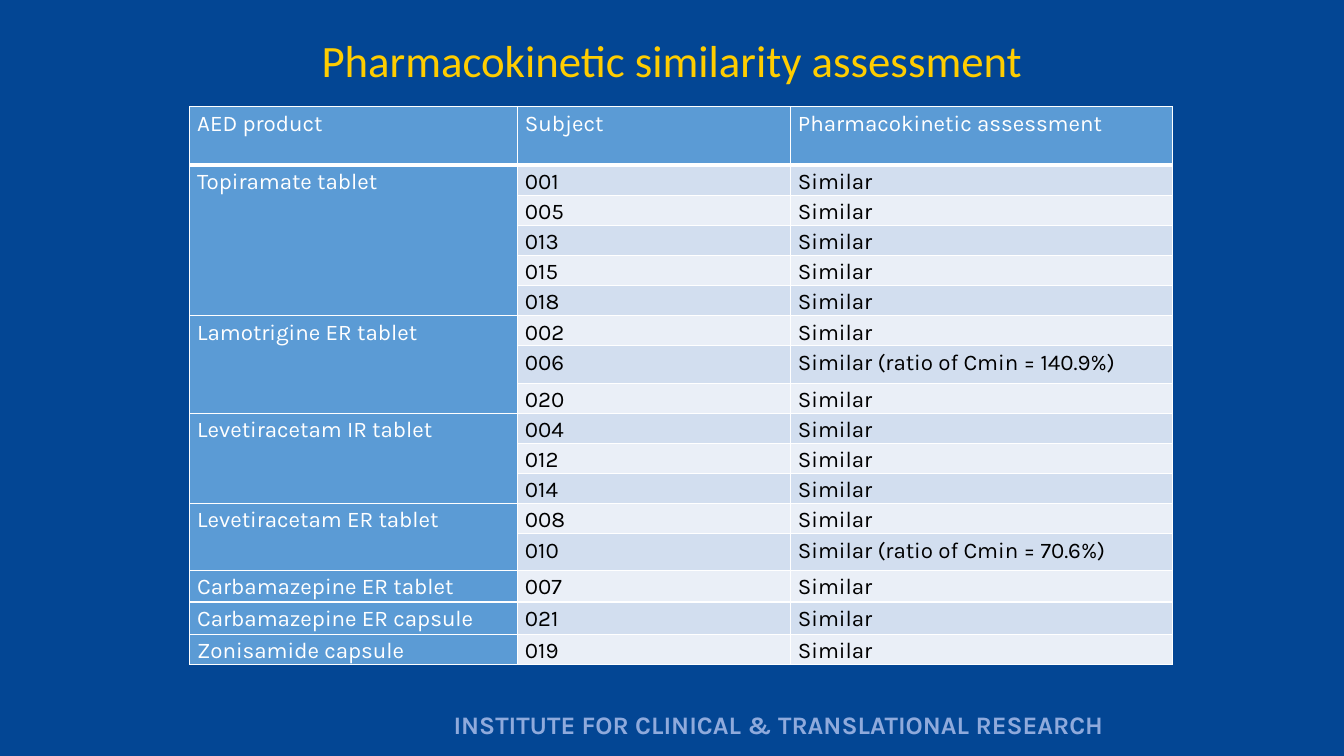
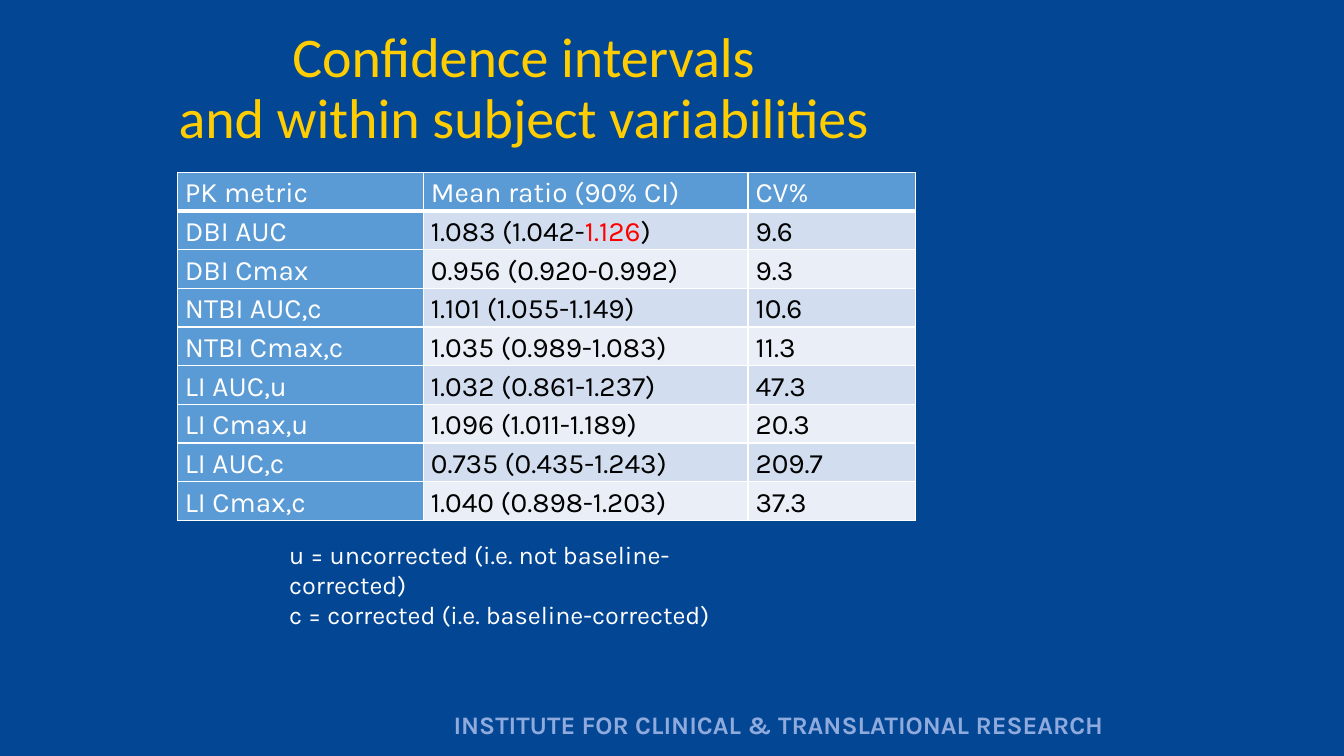
from dataclasses import dataclass

from pptx import Presentation, util as u
from pptx.dml.color import RGBColor
from pptx.enum import text
from pptx.oxml import parse_xml
from pptx.oxml.ns import nsdecls


@dataclass(frozen=True)
class Theme:
    navy: str = "034694"
    gold: str = "FFCD00"
    periwinkle: str = "8FAADC"
    blue: str = "5B9BD5"
    bands: tuple = ("EAEFF7", "D2DEEF")
    white: str = "FFFFFF"
    black: str = "000000"
    red: str = "FF0000"
    heading: str = "Calibri"
    body: str = "Karla"
    note_size: int = 18


class Deck:
    """Holds the theme and the current slide, and draws each kind of element."""

    def __init__(self, theme, footer):
        self.t = theme
        self.prs = Presentation()
        self.prs.slide_width, self.prs.slide_height = u.Cm(33.87), u.Cm(19.05)
        self.footer = footer
        self.s = None

    def slide(self, title, box, size):
        self.s = self.prs.slides.add_slide(self.prs.slide_layouts[5])
        if len(self.prs.slides) == 1:
            self.master()
        sp = self.s.shapes.title
        sp.left, sp.top, sp.width, sp.height = map(u.Cm, box)
        tf = sp.text_frame
        tf.text = title
        tf.auto_size = text.MSO_AUTO_SIZE.NONE
        tf.vertical_anchor = text.MSO_ANCHOR.MIDDLE
        p = tf.paragraphs[0]
        p.alignment = text.PP_ALIGN.CENTER
        p.line_spacing = 0.9
        self.style(p, size, self.t.gold, self.t.heading)

    def master(self):
        master = self.prs.slide_master
        fill = master.background.fill
        fill.solid()
        fill.fore_color.rgb = RGBColor.from_string(self.t.navy)
        sp = self.textbox([self.footer], (11.18, 17.75, 17.2, 1.02), self.t.periwinkle, True)
        sp.element.nvSpPr.cNvPr.set("id", "20")
        master.shapes.element.append(sp.element)

    def style(self, p, size, color, font=None, bold=False):
        for r in p.runs:
            r.font.name = font or self.t.body
            r.font.size = u.Pt(size)
            r.font.bold = bold
            r.font.color.rgb = RGBColor.from_string(color)

    def textbox(self, lines, box, color, bold=False):
        sp = self.s.shapes.add_textbox(*map(u.Cm, box))
        tf = sp.text_frame
        tf.word_wrap = True
        tf.auto_size = text.MSO_AUTO_SIZE.SHAPE_TO_FIT_TEXT
        tf.text = "\n".join(lines)
        for p in tf.paragraphs:
            self.style(p, self.t.note_size, color, bold=bold)
        return sp

    def table(self, rows, left, top, widths, heights, size, after=0):
        box = map(u.Cm, (left, top, sum(widths), sum(heights)))
        tbl = self.s.shapes.add_table(len(rows), len(widths), *box).table
        tbl.first_row = tbl.horz_banding = False
        for col, width in zip(tbl.columns, widths):
            col.width = u.Cm(width)
        for row, height in zip(tbl.rows, heights):
            row.height = u.Cm(height)
        for i, row in enumerate(rows):
            for j, value in enumerate(row):
                self.cell(tbl.cell(i, j), value, i, j, size, after)
        return tbl

    def cell(self, cell, value, i, j, size, after):
        head = i == 0 or j == 0
        cell.margin_left = cell.margin_right = u.Cm(0.19)
        cell.margin_top = cell.margin_bottom = 0
        self.borders(cell, 3 if i == 0 else 1)
        cell.fill.solid()
        fill = self.t.blue if head else self.t.bands[i % 2]
        cell.fill.fore_color.rgb = RGBColor.from_string(fill)
        p = cell.text_frame.paragraphs[0]
        p.line_spacing = 1.15
        p.space_after = u.Pt(after)
        for part in value.split("|") if value else []:
            p.add_run().text = part
        self.style(p, size, self.t.white if head else self.t.black)
        for r in p.runs[1::2]:
            r.font.color.rgb = RGBColor.from_string(self.t.red)

    def borders(self, cell, bottom):
        tcPr = cell._tc.get_or_add_tcPr()
        for side, width in (("L", 1), ("R", 1), ("T", 1), ("B", bottom)):
            tcPr.append(parse_xml(
                f'<a:ln{side} {nsdecls("a")} w="{u.Pt(width)}"><a:solidFill>'
                f'<a:srgbClr val="{self.t.white}"/></a:solidFill></a:ln{side}>'))


PRODUCTS = {
    "Topiramate tablet": ["001", "005", "013", "015", "018"],
    "Lamotrigine ER tablet": ["002", "006", "020"],
    "Levetiracetam IR tablet": ["004", "012", "014"],
    "Levetiracetam ER tablet": ["008", "010"],
    "Carbamazepine ER tablet": ["007"],
    "Carbamazepine ER capsule": ["021"],
    "Zonisamide capsule": ["019"],
}
CMIN_RATIOS = {"006": "140.9%", "010": "70.6%"}
ROW_HEIGHTS = {"006": 0.94, "010": 0.92, "007": 0.8, "021": 0.81}
METRICS = [
    ("PK metric", "Mean ratio (90% CI)", "CV%"),
    ("DBI AUC", "1.083 (1.042-|1.126|)", "9.6"),
    ("DBI Cmax", "0.956 (0.920-0.992)", "9.3"),
    ("NTBI AUC,c", "1.101 (1.055-1.149)", "10.6"),
    ("NTBI Cmax,c", "1.035 (0.989-1.083)", "11.3"),
    ("LI AUC,u", "1.032 (0.861-1.237)", "47.3"),
    ("LI Cmax,u", "1.096 (1.011-1.189)", "20.3"),
    ("LI AUC,c", "0.735 (0.435-1.243)", "209.7"),
    ("LI Cmax,c", "1.040 (0.898-1.203)", "37.3"),
]


def similarity(deck):
    deck.slide("Pharmacokinetic similarity assessment", (4.34, 0, 25.2, 3.18), 32)
    rows, heights, spans = [("AED product", "Subject", "Pharmacokinetic assessment")], [1.47], []
    for product, subjects in PRODUCTS.items():
        spans.append((len(rows), len(rows) + len(subjects) - 1))
        for k, subject in enumerate(subjects):
            ratio = CMIN_RATIOS.get(subject)
            result = f"Similar (ratio of Cmin = {ratio})" if ratio else "Similar"
            rows.append((product if k == 0 else "", subject, result))
            heights.append(ROW_HEIGHTS.get(subject, 0.71))
    tbl = deck.table(rows, 4.78, 2.69, (8.26, 6.88, 9.63), heights, 16, after=10)
    for first, last in spans:
        if last > first:
            tbl.cell(first, 0).merge(tbl.cell(last, 0))


def intervals(deck):
    deck.slide("Confidence intervals\vand within subject variabilities",
               (1.78, 0.43, 22.83, 3.68), 40)
    deck.textbox(["u = uncorrected (i.e. not baseline-corrected)",
                  "c = corrected (i.e. baseline-corrected)"],
                 (7.04, 13.46, 12.32, 1.8), deck.t.white)
    deck.table(METRICS, 4.47, 4.34, (6.2, 8.18, 4.22), [0.97] * len(METRICS), 20)


def main():
    deck = Deck(Theme(), "INSTITUTE FOR CLINICAL & TRANSLATIONAL RESEARCH")
    similarity(deck)
    intervals(deck)
    deck.prs.save("out.pptx")


if __name__ == "__main__":
    main()
